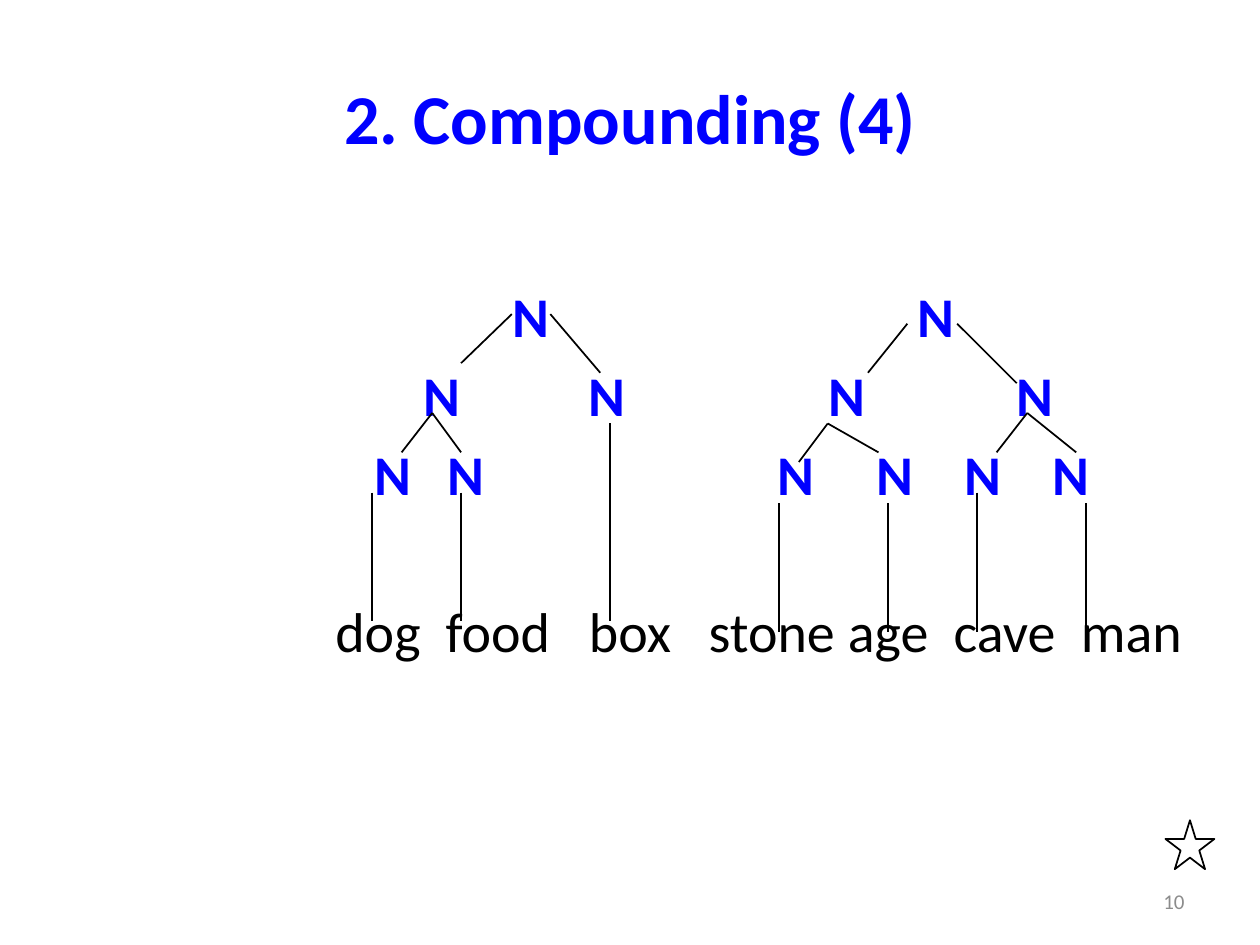
from lxml import etree
from pptx import Presentation
from pptx.dml.color import RGBColor
from pptx.enum import shapes, text
from pptx.oxml.ns import qn
from pptx.util import Pt

BLACK = RGBColor(0, 0, 0)
WHITE = RGBColor(255, 255, 255)
BLUE = RGBColor(0, 0, 255)
GREY = RGBColor(0x8C, 0x8C, 0x8C)

# Word rows: top of the first row, distance between rows
ROW_TOP, ROW_STEP = 161, 45
LABEL_W, LABEL_H = 90, 39

# Centres of the category labels, one list per tree level
NODES = [
    [303.5, 535],
    [252.5, 347, 484, 591.5],
    [224.5, 266.5, 455, 511.5, 561.5, 612],
]
WORDS = [("dog", 216), ("food", 284.5), ("box", 360), ("stone", 441),
         ("age", 507.5), ("cave", 574), ("man", 646.5)]
WORD_ROW = 4

# Branches: x1, y1, x2, y2
BRANCHES = [
    (292.5, 179.5, 263.5, 207.5), (314.5, 179.5, 343, 213),
    (247, 236, 229.5, 258.5), (247, 236, 263.5, 258.5),
    (518.5, 185, 496, 213), (547, 185, 581, 219),
    (473, 242, 456.5, 264), (473, 242, 502, 258.5),
    (587, 236, 569.5, 258.5), (587, 236, 615, 258.5),
]
# Stems down to the words: x, top, bottom
STEMS = [
    (212.5, 281.5, 355), (263.5, 281.5, 355), (348.5, 242, 355),
    (445, 287.5, 361), (507.5, 287.5, 361), (558.5, 281.5, 361),
    (620.5, 287.5, 366.5),
]


def write(tf, content, size=32, color=BLACK, bold=False,
          align=text.PP_ALIGN.CENTER, anchor=text.MSO_ANCHOR.TOP):
    tf.word_wrap = True
    tf.vertical_anchor = anchor
    p = tf.paragraphs[0]
    p.alignment = align
    r = p.add_run()
    r.text = content
    r.font.name = "Calibri"
    r.font.size = Pt(size)
    r.font.bold = bold
    r.font.color.rgb = color


class Deck:
    def __init__(self, prs, line_width=1):
        self.line_width = line_width
        self.s = prs.slides.add_slide(prs.slide_layouts[5])

    def title(self, content, x, y, w, h):
        sp = self.s.shapes.title
        sp.left, sp.top, sp.width, sp.height = Pt(x), Pt(y), Pt(w), Pt(h)
        write(sp.text_frame, content, size=40, color=BLUE, bold=True,
              anchor=text.MSO_ANCHOR.MIDDLE)

    def text_box(self, content, x, y, w, h, **style):
        sp = self.s.shapes.add_textbox(Pt(x), Pt(y), Pt(w), Pt(h))
        write(sp.text_frame, content, **style)
        return sp

    def label(self, content, center, row, **style):
        sp = self.text_box(content, center - LABEL_W / 2,
                           ROW_TOP + row * ROW_STEP, LABEL_W, LABEL_H, **style)
        tf = sp.text_frame
        tf.margin_left = tf.margin_right = tf.margin_top = tf.margin_bottom = 0

    def line(self, x1, y1, x2, y2):
        c = self.s.shapes.add_connector(shapes.MSO_CONNECTOR.STRAIGHT,
                                        Pt(x1), Pt(y1), Pt(x2), Pt(y2))
        c.line.color.rgb = BLACK
        c.line.width = Pt(self.line_width)
        etree.SubElement(c._element.spPr, qn("a:effectLst"))

    def star(self, x, y, size):
        sp = self.s.shapes.add_shape(shapes.MSO_SHAPE.STAR_5_POINT,
                                     Pt(x), Pt(y), Pt(size), Pt(size))
        sp.shadow.inherit = False
        sp.fill.solid()
        sp.fill.fore_color.rgb = WHITE
        sp.line.color.rgb = BLACK
        sp.line.width = Pt(self.line_width)


def main():
    prs = Presentation()
    prs.slide_width, prs.slide_height = Pt(720), Pt(540)
    deck = Deck(prs)

    # Title and slide number
    deck.title("2. Compounding (4)", 36, 21.6, 648, 90)
    deck.text_box("10", 516, 500.5, 168, 28.75, size=12, color=GREY,
                  align=text.PP_ALIGN.RIGHT, anchor=text.MSO_ANCHOR.MIDDLE)

    # Tree labels and words
    for row, centers in enumerate(NODES):
        for center in centers:
            deck.label("N", center, row, color=BLUE, bold=True)
    for word, center in WORDS:
        deck.label(word, center, WORD_ROW)

    # Tree lines
    for branch in BRANCHES:
        deck.line(*branch)
    for x, top, bottom in STEMS:
        deck.line(x, top, x, bottom)

    # Corner star
    deck.star(666, 468.75, 28)

    prs.save("out.pptx")


if __name__ == "__main__":
    main()
